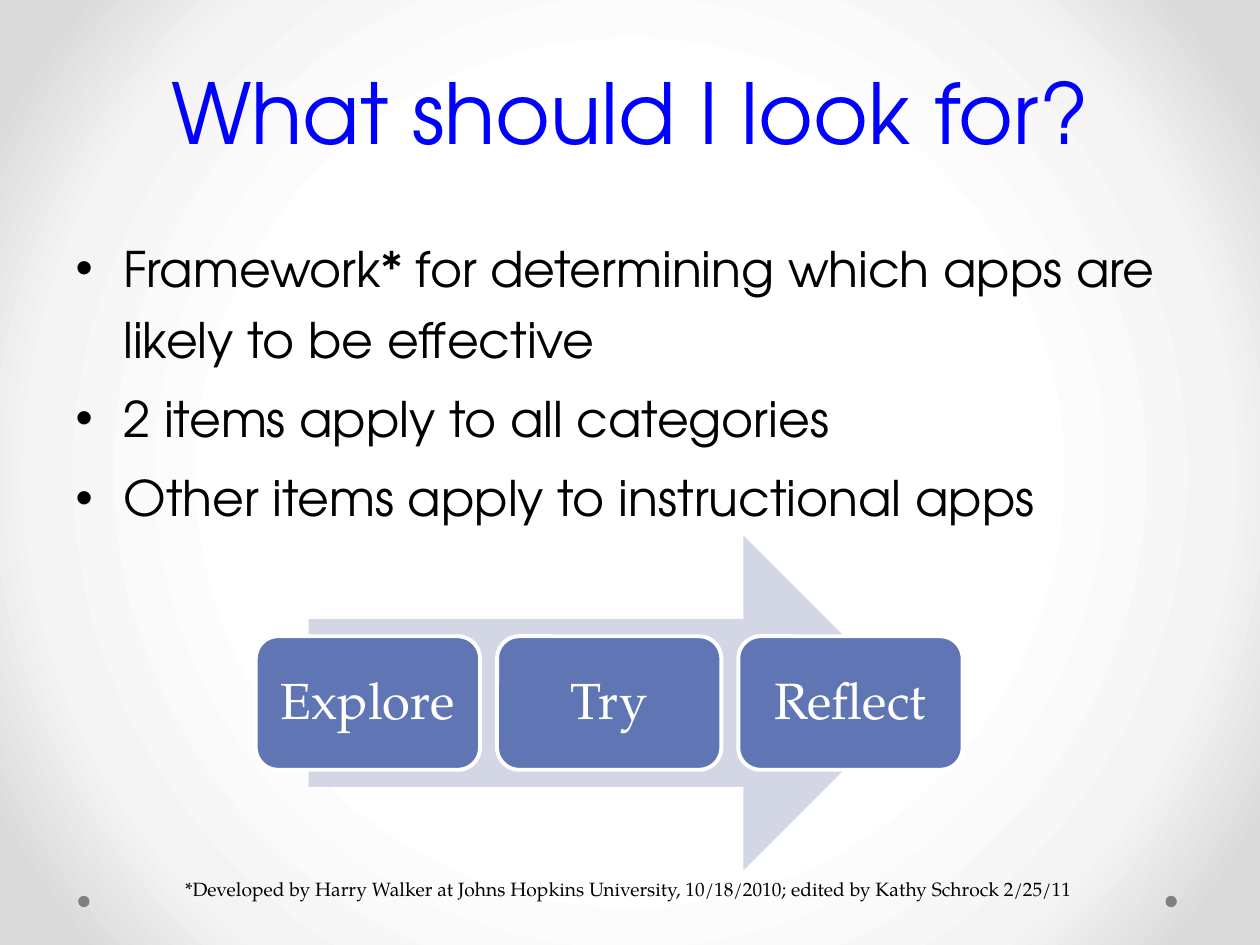
"""Build the slide about what to look for in an app."""
from dataclasses import dataclass

from lxml import etree
from pptx import Presentation
from pptx import util as u
from pptx.dml.color import RGBColor
from pptx.enum import shapes, text
from pptx.oxml.ns import nsdecls, qn
from pptx.shapes.autoshape import Shape
from pptx.slide import Slide

WIDTH, HEIGHT = u.Inches(10), u.Inches(7.5)
COLUMNS, ROWS = 100, 75
BLUE = RGBColor(0x00, 0x00, 0xFF)
BLACK = RGBColor(0x00, 0x00, 0x00)
WHITE = RGBColor(0xFF, 0xFF, 0xFF)
GREY = RGBColor(0x80, 0x80, 0x80)
PALE = RGBColor(0xF4, 0xF4, 0xF4)
RIM = RGBColor(0xDA, 0xDA, 0xDA)
LAVENDER = RGBColor(0xD2, 0xD6, 0xE5)
INDIGO = RGBColor(0x60, 0x76, 0xB4)
GLOW = ((50, WHITE), (76, PALE), (92, RIM))
SANS, SERIF = "TeX Gyre Adventor", "TeX Gyre Pagella"

CRITERIA = (
    "Framework* for determining which apps are likely to be effective",
    "2 items apply to all categories",
    "Other items apply to instructional apps",
)
STEPS = ("Explore", "Try", "Reflect")
CREDIT = ("*Developed by Harry Walker at Johns Hopkins University, 10/18/2010; "
          "edited by Kathy Schrock 2/25/11")
STEP_LEFT, STEP_PITCH = 20.3, 19.15


@dataclass(frozen=True)
class Area:
    """A rectangle in grid columns and rows."""
    column: float
    row: float
    columns: float
    rows: float

    def place(self) -> dict[str, int]:
        """Return the position and size as shape attributes."""
        return {
            "left": int(WIDTH * self.column / COLUMNS),
            "top": int(HEIGHT * self.row / ROWS),
            "width": int(WIDTH * self.columns / COLUMNS),
            "height": int(HEIGHT * self.rows / ROWS),
        }


@dataclass(frozen=True)
class Lettering:
    """The font of a text."""
    name: str
    size: float
    color: RGBColor


def assign(target: object, values: dict) -> None:
    """Set each attribute in values on the target."""
    for attribute, value in values.items():
        setattr(target, attribute, value)


def write(holder: Shape, lines: tuple[str, ...], lettering: Lettering,
          frame: dict, layout: dict) -> None:
    """Fill a shape with paragraphs in one format."""
    assign(holder.text_frame, {"word_wrap": True, **frame})
    holder.text_frame.text = "\n".join(lines)
    for paragraph in holder.text_frame.paragraphs:
        assign(paragraph, layout)
        font = paragraph.runs[0].font
        assign(font, {"name": lettering.name, "size": u.Pt(lettering.size)})
        font.color.rgb = lettering.color


def draw(slide: Slide, kind: shapes.MSO_SHAPE, area: Area, fill: RGBColor) -> Shape:
    """Add a plain filled shape."""
    figure = slide.shapes.add_shape(kind, **area.place())
    figure.shadow.inherit = False
    figure.fill.solid()
    figure.fill.fore_color.rgb = fill
    figure.line.fill.background()
    return figure


def paint_background(slide: Slide) -> None:
    """Give the slide a radial glow."""
    slide.background.fill.gradient()
    gradient = slide.element.find(".//" + qn("a:gradFill"))
    stops = "".join(f'<a:gs pos="{share * 1000}"><a:srgbClr val="{color}"/></a:gs>'
                    for share, color in GLOW)
    glow = etree.fromstring(
        f'<a:gradFill {nsdecls("a")} rotWithShape="1"><a:gsLst>{stops}</a:gsLst>'
        '<a:path path="circle"><a:fillToRect l="50000" t="50000" r="50000" b="50000"/>'
        "</a:path></a:gradFill>")
    gradient.getparent().replace(gradient, glow)


def add_bullets(body: Shape) -> None:
    """Put a hanging bullet before each paragraph."""
    for paragraph in body.text_frame.paragraphs:
        properties = paragraph._p.get_or_add_pPr()
        properties.set("marL", str(u.Inches(0.38)))
        properties.set("indent", str(u.Inches(-0.38)))
        etree.SubElement(properties, qn("a:buFont")).set("typeface", "Arial")
        etree.SubElement(properties, qn("a:buChar")).set("char", "•")


def add_step(slide: Slide, index: int, label: str) -> None:
    """Add one step of the process."""
    area = Area(STEP_LEFT + index * STEP_PITCH, 50.5, 17.8, 10.6)
    step = draw(slide, shapes.MSO_SHAPE.ROUNDED_RECTANGLE, area, INDIGO)
    step.line.color.rgb = WHITE
    step.line.width = u.Pt(2.25)
    sides = ("left", "top", "right", "bottom")
    margins = {f"margin_{side}": u.Inches(0.12) for side in sides}
    write(step, (label,), Lettering(SERIF, 29, WHITE),
          {"vertical_anchor": text.MSO_ANCHOR.MIDDLE, **margins},
          {"alignment": text.PP_ALIGN.CENTER, "line_spacing": 0.9})


def main() -> None:
    """Compose and save the slide."""
    deck = Presentation()
    assign(deck, {"slide_width": WIDTH, "slide_height": HEIGHT})
    slide = deck.slides.add_slide(deck.slide_layouts[1])
    paint_background(slide)

    for column in (92.5, 6.2):
        draw(slide, shapes.MSO_SHAPE.OVAL, Area(column, 71.1, 0.9, 0.9), GREY)

    title, criteria = slide.placeholders
    assign(title, Area(5, 0, 90, 17.5).place())
    write(title, ("What should I look for?",), Lettering(SANS, 48, BLUE),
          {"vertical_anchor": text.MSO_ANCHOR.MIDDLE,
           "auto_size": text.MSO_AUTO_SIZE.NONE},
          {"alignment": text.PP_ALIGN.CENTER, "line_spacing": u.Pt(58)})

    assign(criteria, Area(5, 17.5, 90, 39.6).place())
    write(criteria, CRITERIA, Lettering(SANS, 28, BLACK),
          {"vertical_anchor": text.MSO_ANCHOR.TOP,
           "auto_size": text.MSO_AUTO_SIZE.NONE},
          {"line_spacing": 1.2, "space_before": u.Pt(5)})
    add_bullets(criteria)

    draw(slide, shapes.MSO_SHAPE.RIGHT_ARROW, Area(24.5, 42.5, 47.8, 26.6), LAVENDER)
    for index, label in enumerate(STEPS):
        add_step(slide, index, label)

    credit = slide.shapes.add_textbox(**Area(13.7, 69.1, 75.1, 5.9).place())
    write(credit, (CREDIT,), Lettering(SERIF, 11, BLACK), {}, {})
    deck.save("out.pptx")


if __name__ == "__main__":
    main()
